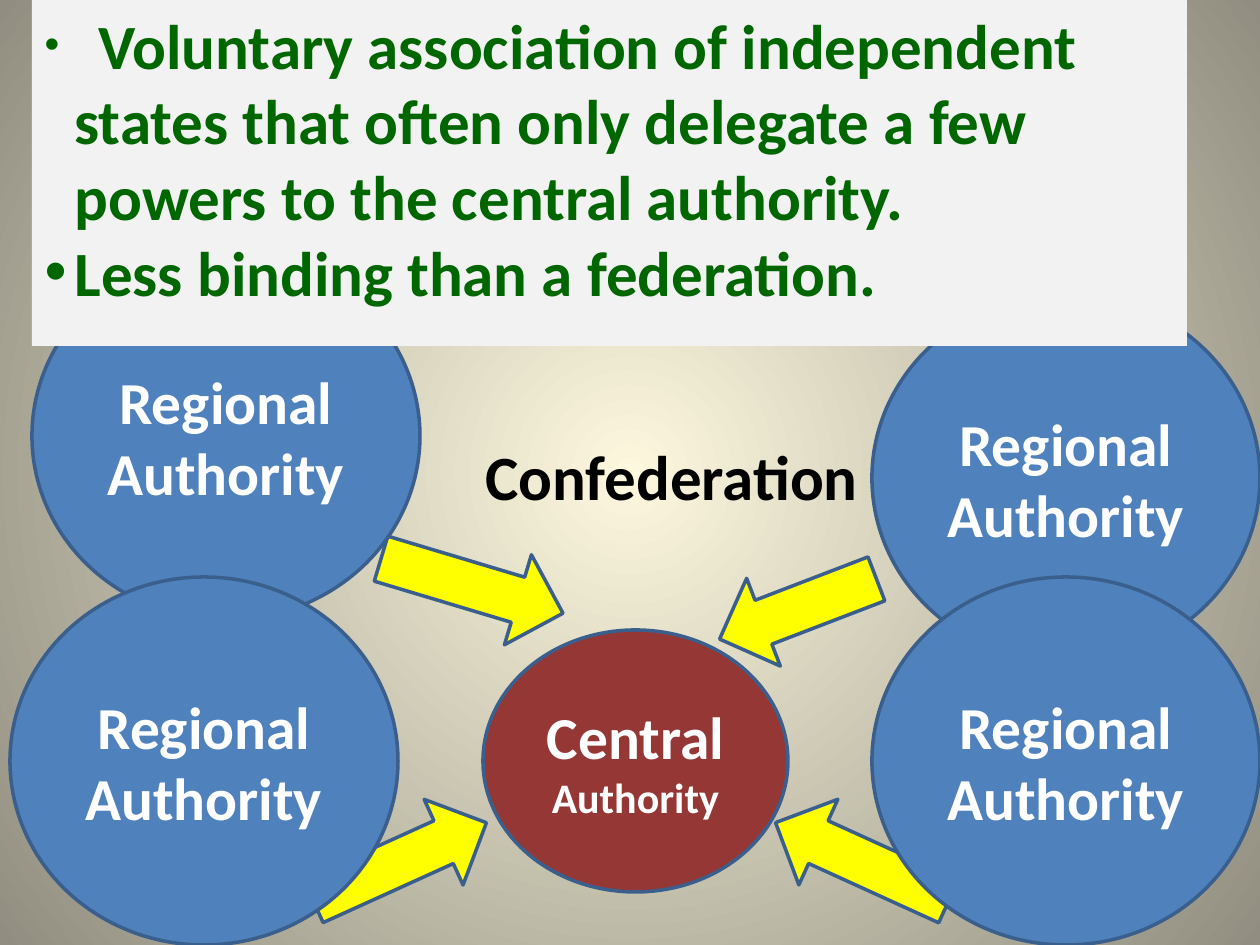
from pptx import Presentation
from pptx.dml.color import RGBColor
from pptx.enum.shapes import MSO_SHAPE
from pptx.enum.text import MSO_ANCHOR, MSO_AUTO_SIZE, PP_ALIGN
from pptx.oxml import parse_xml
from pptx.oxml.ns import nsdecls, qn
from pptx.util import Pt

ELLIPSE, ARROW = MSO_SHAPE.OVAL, MSO_SHAPE.RIGHT_ARROW
TOP, MIDDLE = MSO_ANCHOR.TOP, MSO_ANCHOR.MIDDLE
CENTER, LEFT = PP_ALIGN.CENTER, PP_ALIGN.LEFT
NO_FIT = MSO_AUTO_SIZE.NONE

CREAM = RGBColor(0xFC, 0xF7, 0xDD)
TAUPE = RGBColor(0x91, 0x8E, 0x81)
YELLOW = RGBColor(0xFF, 0xFF, 0x00)
BLUE = RGBColor(0x4F, 0x81, 0xBD)
OUTLINE = RGBColor(0x3A, 0x5F, 0x8C)
RED = RGBColor(0x95, 0x37, 0x35)
PANEL = RGBColor(0xF2, 0xF2, 0xF2)
GREEN = RGBColor(0x00, 0x66, 0x00)
WHITE = RGBColor(0xFF, 0xFF, 0xFF)
BLACK = RGBColor(0x00, 0x00, 0x00)

FONT = "Calibri"
SLIDE_W, SLIDE_H = 1260, 945
REGION_W, REGION_H = 388, 368
REGIONS = [(872, 294), (872, 577), (32, 252), (10, 577)]
# left, top, width, rotation
ARROWS = [(377, 539, 190, 16.7), (305, 815, 190, 335.6),
          (767, 815, 190, 204.5), (714, 562, 168, 159)]
ARROW_H = 94
CENTRAL_BOX = (483, 630, 305, 262)
POINTS = [
    [(" ", 24), (" Voluntary association of independent states that often only "
                 "delegate a few powers to the central authority.", 36)],
    [("Less binding than a federation.", 36)],
]


def px(n):
    return round(n * 914400 / 126)


def place(sp, box):
    sp.left, sp.top, sp.width, sp.height = map(px, box)


def write(p, runs, color, align):
    p.alignment = align
    p.font.name, p.font.bold = FONT, True
    p.font.color.rgb = color
    for text, size in runs:
        r = p.add_run()
        r.text = text
        r.font.size = Pt(size)


def add_outlined(s, kind, box, fill):
    sp = s.shapes.add_shape(kind, *map(px, box))
    sp.shadow.inherit = False
    sp.fill.solid()
    sp.fill.fore_color.rgb = fill
    sp.line.color.rgb = OUTLINE
    sp.line.width = Pt(2)
    return sp


def add_authority(s, box, fill, runs):
    tf = add_outlined(s, ELLIPSE, box, fill).text_frame
    tf.word_wrap = True
    tf.vertical_anchor = MIDDLE
    write(tf.paragraphs[0], runs, WHITE, CENTER)


def add_arrow(s, box, rotation):
    add_outlined(s, ARROW, box, YELLOW).rotation = rotation


def prepare_placeholder(s, sp, box):
    """Place it in front of the diagram and return its text frame."""
    s.shapes._spTree.append(sp._element)
    place(sp, box)
    tf = sp.text_frame
    tf.auto_size = NO_FIT
    tf.word_wrap = True
    tf.vertical_anchor = TOP
    return tf


def fill_body(s, box):
    sp = s.placeholders[1]
    tf = prepare_placeholder(s, sp, box)
    sp.fill.solid()
    sp.fill.fore_color.rgb = PANEL
    for i, runs in enumerate(POINTS):
        p = tf.add_paragraph() if i else tf.paragraphs[0]
        write(p, runs, GREEN, LEFT)
        p.space_before = Pt(0)
        pPr = p._p.get_or_add_pPr()
        pPr.set("marL", str(px(30)))
        pPr.set("indent", str(px(-30)))


def fill_title(s, box):
    tf = prepare_placeholder(s, s.shapes.title, box)
    write(tf.paragraphs[0], [("Confederation", 36)], BLACK, CENTER)


def paint_background(s):
    fill = s.background.fill
    fill.gradient()
    for stop, color in zip(fill.gradient_stops, (CREAM, TAUPE)):
        stop.color.rgb = color
    lin = s._element.find(".//" + qn("a:lin"))
    lin.getparent().replace(lin, parse_xml(
        f'<a:path {nsdecls("a")} path="circle">'
        '<a:fillToRect l="50000" t="50000" r="50000" b="50000"/></a:path>'))


def main():
    prs = Presentation()
    prs.slide_width, prs.slide_height = px(SLIDE_W), px(SLIDE_H)
    s = prs.slides.add_slide(prs.slide_layouts[1])
    paint_background(s)
    for x, y, w, rotation in ARROWS:
        add_arrow(s, (x, y, w, ARROW_H), rotation)
    add_authority(s, CENTRAL_BOX, RED, [("Central ", 34), ("Authority", 24)])
    for x, y in REGIONS:
        add_authority(s, (x, y, REGION_W, REGION_H), BLUE,
                      [("Regional Authority", 34)])
    fill_body(s, (32, 0, 1155, 346))
    fill_title(s, (451, 431, 441, 110))
    prs.save("out.pptx")


if __name__ == "__main__":
    main()
